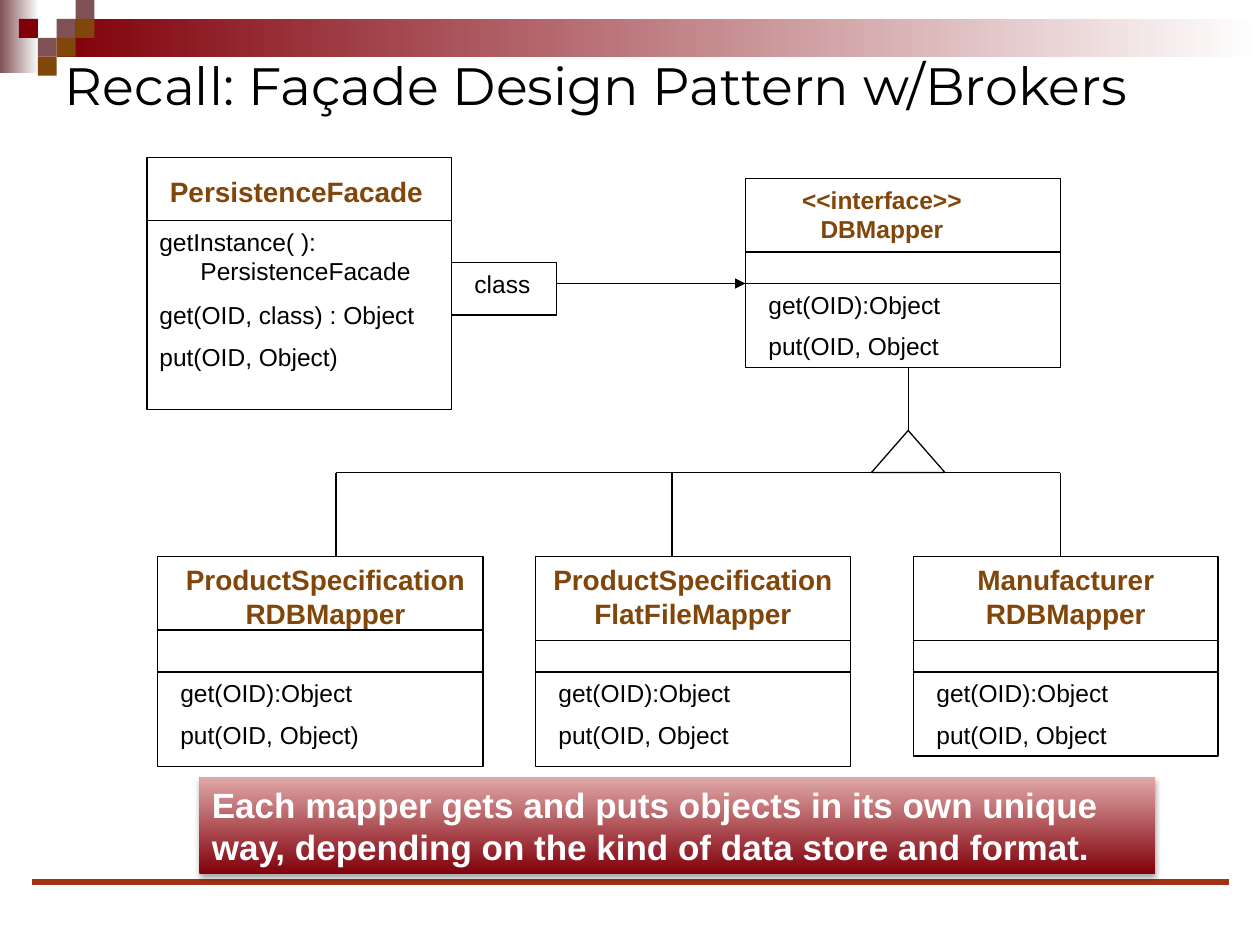
import pptx
import pptx.dml.color
import pptx.enum.shapes
import pptx.enum.text
import pptx.oxml
import pptx.oxml.ns
import pptx.util

Pt = pptx.util.Pt
SHAPE = pptx.enum.shapes.MSO_SHAPE
ALIGN = pptx.enum.text.PP_ALIGN
ANCHOR = pptx.enum.text.MSO_ANCHOR
NS = pptx.oxml.ns.nsdecls("a")

COLORS = {
    "black": "000000",
    "white": "FFFFFF",
    "maroon": "80000A",
    "mauve": "805255",
    "brown": "81460A",
    "pink": "E0A9A9",
    "rust": "A13214",
}
SQUARE = 10.8


def rgb(name):
    return pptx.dml.color.RGBColor.from_string(COLORS[name])


def add_box(s, x, y, w, h, fill="white", line=None, kind=SHAPE.RECTANGLE):
    sp = s.shapes.add_shape(kind, Pt(x), Pt(y), Pt(w), Pt(h))
    sp.shadow.inherit = False
    sp.fill.solid()
    sp.fill.fore_color.rgb = rgb(fill)
    if line:
        sp.line.color.rgb = rgb(line)
        sp.line.width = Pt(0.75)
    else:
        sp.line.fill.background()
    return sp


def add_gradient_box(s, x, y, w, h, start, end, angle=0):
    sp = add_box(s, x, y, w, h)
    sp.fill.gradient()
    sp.fill.gradient_angle = angle
    for stop, name in zip(sp.fill.gradient_stops, (start, end)):
        stop.color.rgb = rgb(name)
    return sp


def add_line(s, x1, y1, x2, y2, color="black", width=0.75, arrow=False):
    cx = s.shapes.add_connector(
        pptx.enum.shapes.MSO_CONNECTOR.STRAIGHT, Pt(x1), Pt(y1), Pt(x2), Pt(y2))
    cx.line.color.rgb = rgb(color)
    cx.line.width = Pt(width)
    if arrow:
        cx.line._get_or_add_ln().append(
            pptx.oxml.parse_xml(f'<a:tailEnd {NS} type="triangle"/>'))
    cx._element.spPr.append(pptx.oxml.parse_xml(f"<a:effectLst {NS}/>"))
    return cx


def write(sp, text, size, color="black", bold=False, align=ALIGN.LEFT,
          font="Arial", anchor=ANCHOR.TOP):
    tf = sp.text_frame
    tf.word_wrap = True
    tf.vertical_anchor = anchor
    tf.text = text
    for i, p in enumerate(tf.paragraphs):
        p.alignment = align
        if i:
            p.space_before = Pt(size / 2)
        for r in p.runs:
            r.font.name = font
            r.font.size = Pt(size)
            r.font.bold = bold
            r.font.color.rgb = rgb(color)


def add_text(s, x, y, w, h, text, size=14, **style):
    sp = s.shapes.add_textbox(Pt(x), Pt(y), Pt(w), Pt(h))
    write(sp, text, size, **style)
    return sp


def add_mapper(s, box, name, name_x, name_w, name_size, rules, members):
    """Class box with a centred name, two dividers and a list of operations."""
    x, y, w, h = box
    add_box(s, x, y, w, h, line="black")
    add_text(s, name_x, y, name_w, 2.9 * name_size, name, name_size,
             color="brown", bold=True, align=ALIGN.CENTER)
    for rule in rules:
        add_line(s, x, rule, x + w, rule)
    add_text(s, x + 6, rules[-1], w - 12, 49.5, members)


def add_decoration(s):
    add_gradient_box(s, 0, 0, 22.3, 41.8, "mauve", "white")
    add_gradient_box(s, 32.4, SQUARE, 687.6, 2 * SQUARE, "maroon", "white")
    squares = [(3, 1, "mauve"), (4, 0, "mauve"), (4, 1, "brown"), (2, 2, "mauve"),
               (1, 1, "maroon"), (3, 2, "brown"), (2, 3, "brown")]
    for col, row, color in squares:
        add_box(s, col * SQUARE, row * SQUARE, SQUARE, SQUARE, color)
    add_line(s, 18, 504, 702, 504, "rust", 3)


def add_facade(s):
    add_box(s, 84, 90, 174, 144, line="black")
    add_text(s, 90, 96, 162, 26.6, "PersistenceFacade", 16, color="brown", bold=True)
    add_line(s, 84, 126, 258, 126)
    sp = add_text(s, 84, 126, 174, 41, "getInstance( ): PersistenceFacade")
    pPr = sp.text_frame.paragraphs[0]._p.get_or_add_pPr()
    pPr.set("marL", str(Pt(23.5)))
    pPr.set("indent", str(-Pt(23.5)))
    add_text(s, 84, 168, 162, 49.5, "get(OID, class) : Object\nput(OID, Object)")


def add_qualifier(s):
    add_box(s, 258, 150, 60, 30, line="black")
    add_text(s, 264, 150, 48, 24, "class")
    add_line(s, 318, 162, 426, 162, arrow=True)


def add_inheritance(s):
    add_line(s, 519, 210, 519, 246)
    add_box(s, 498, 246, 42, 24, line="black", kind=SHAPE.ISOSCELES_TRIANGLE)
    add_line(s, 498, 270, 192, 270)
    add_line(s, 534, 270, 606, 270)
    for x in (192, 384, 606):
        add_line(s, x, 270, x, 318)


def add_banner(s):
    sp = add_gradient_box(s, 114, 444, 546, 55.5, "maroon", "pink", 90)
    write(sp, "Each mapper gets and puts objects in its own unique way, "
          "depending on the kind of data store and format.", 20,
          color="white", bold=True)
    effects = sp._element.spPr.find(pptx.oxml.ns.qn("a:effectLst"))
    effects.append(pptx.oxml.parse_xml(
        f'<a:outerShdw {NS} blurRad="{Pt(3.1)}" dist="{Pt(1.8)}" dir="5400000" '
        f'rotWithShape="0"><a:srgbClr val="{COLORS["black"]}">'
        '<a:alpha val="35000"/></a:srgbClr></a:outerShdw>'))


def main():
    prs = pptx.Presentation()
    prs.slide_width, prs.slide_height = Pt(720), Pt(540)
    s = prs.slides.add_slide(prs.slide_layouts[6])
    add_decoration(s)
    add_text(s, 30, 24, 690, 48, "Recall: Façade Design Pattern w/Brokers", 30,
             font="Montserrat", anchor=ANCHOR.MIDDLE)
    add_facade(s)
    closed = "get(OID):Object\nput(OID, Object)"
    unclosed = "get(OID):Object\nput(OID, Object"
    add_mapper(s, (90, 318, 186, 120), "ProductSpecification RDBMapper",
               90, 192, 16, (360, 384), closed)
    add_mapper(s, (426, 102, 180, 108), "<<interface>> DBMapper",
               432, 144, 14, (144, 162), unclosed)
    add_qualifier(s)
    add_mapper(s, (306, 318, 180, 120), "ProductSpecification FlatFileMapper",
               306, 180, 16, (366, 384), unclosed)
    add_mapper(s, (522, 318, 174, 114), "Manufacturer RDBMapper",
               528, 162, 16, (366, 384), unclosed)
    add_inheritance(s)
    add_banner(s)
    prs.save("out.pptx")


if __name__ == "__main__":
    main()
